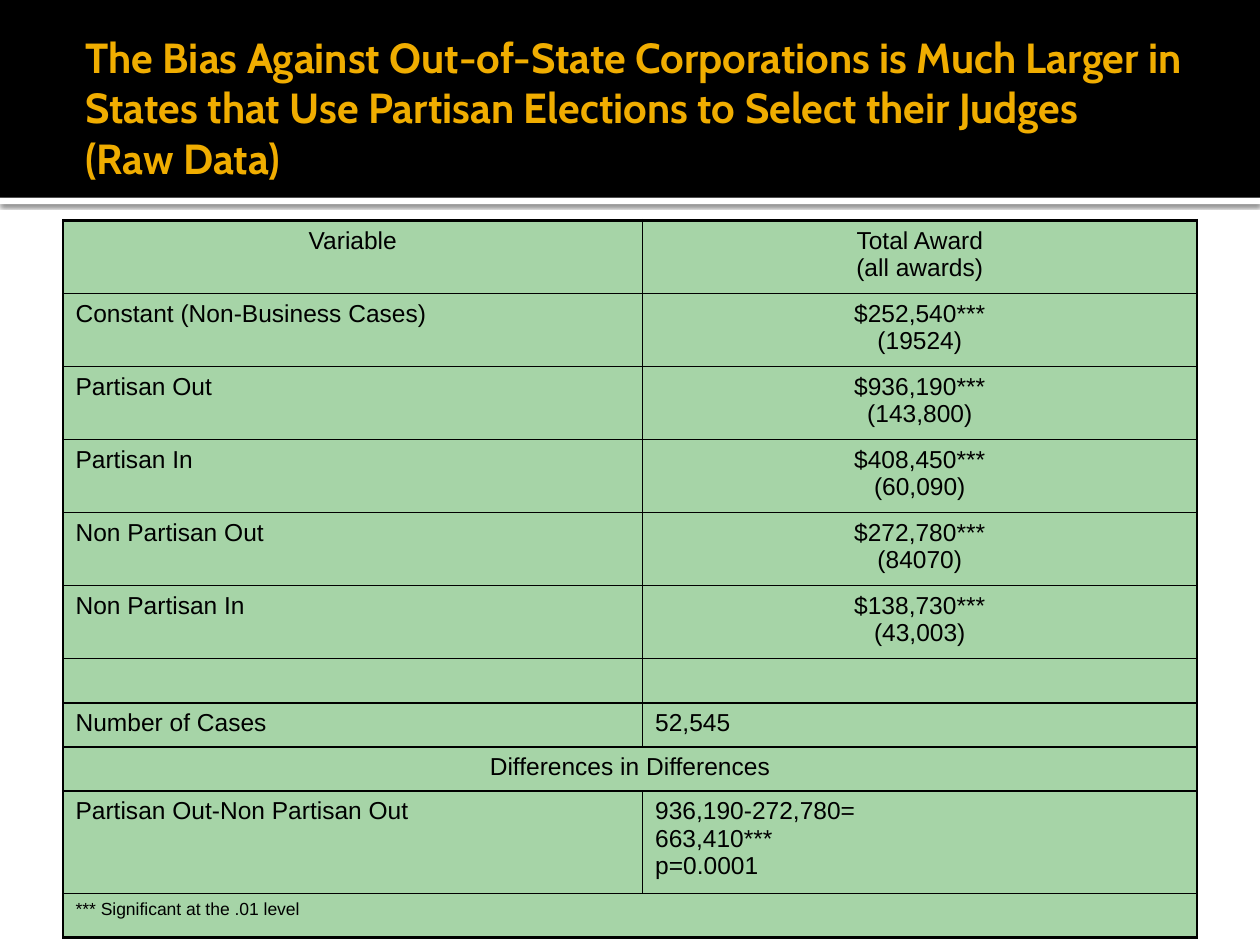
from pptx import Presentation
from pptx.dml.color import RGBColor
from pptx.enum.shapes import MSO_SHAPE
from pptx.enum.text import MSO_ANCHOR, PP_ALIGN
from pptx.oxml.ns import qn
from pptx.util import Inches, Pt
from lxml.etree import SubElement

COLORS = {"black": "000000", "white": "FFFFFF", "gold": "F0AD00", "green": "A6D4A7"}
LEFT, CENTER = PP_ALIGN.LEFT, PP_ALIGN.CENTER

ROWS = [
    (0.58, ("Variable", CENTER), ("Total Award\n(all awards)", CENTER)),
    (0.58, ("Constant (Non-Business Cases)", LEFT), ("$252,540***\n(19524)", CENTER)),
    (0.58, ("Partisan Out", LEFT), ("$936,190***\n(143,800)", CENTER)),
    (0.58, ("Partisan In", LEFT), ("$408,450***\n(60,090)", CENTER)),
    (0.58, ("Non Partisan Out", LEFT), ("$272,780***\n(84070)", CENTER)),
    (0.58, ("Non Partisan In", LEFT), ("$138,730***\n(43,003)", CENTER)),
    (0.35, ("", LEFT), ("", LEFT)),
    (0.35, ("Number of Cases", LEFT), ("52,545", LEFT)),
    (0.35, ("Differences in Differences", CENTER)),
    (0.81, ("Partisan Out-Non Partisan Out", LEFT),
     ("936,190-272,780=\n663,410***\np=0.0001", LEFT)),
    (0.35, ("*** Significant at the .01 level", LEFT)),
]
RULE_WIDTHS = {0: 2, 1: 1, 8: 1, 9: 1, 10: 1, len(ROWS): 2}


def rgb(name):
    return RGBColor.from_string(COLORS[name])


class SlideBuilder:
    title_font = "Cabin"
    table_font = "Arial"

    def __init__(self, slide):
        self.slide = slide

    def band(self, top, height, color, shadow=False):
        band = self.slide.shapes.add_shape(
            MSO_SHAPE.RECTANGLE, 0, Inches(top), Inches(10), Inches(height))
        band.fill.solid()
        band.fill.fore_color.rgb = rgb(color)
        band.line.fill.background()
        band.shadow.inherit = False
        if shadow:
            effects = band._element.spPr.find(qn("a:effectLst"))
            outer = SubElement(effects, qn("a:outerShdw"), blurRad=str(Pt(2.5)),
                               dist=str(Pt(0.8)), dir="5400000", algn="tl", rotWithShape="0")
            tint = SubElement(outer, qn("a:srgbClr"), val=COLORS["black"])
            SubElement(tint, qn("a:alpha"), val="60000")
        self.slide.shapes.title._element.addprevious(band._element)

    def title(self, text):
        title = self.slide.shapes.title
        title.left, title.top = Inches(0.58), Inches(0.5)
        title.width, title.height = Inches(9), Inches(0.7)
        frame = title.text_frame
        frame.text = text
        frame.word_wrap = True
        frame.vertical_anchor = MSO_ANCHOR.MIDDLE
        frame.margin_left, frame.margin_right = Inches(0.1), Inches(0.05)
        frame.margin_top = frame.margin_bottom = Inches(0.05)
        frame.paragraphs[0].alignment = LEFT
        for run in frame.paragraphs[0].runs:
            self.style(run.font, self.title_font, 24, "gold", True)

    def style(self, font, name, size, color, bold=False):
        font.name, font.size, font.bold = name, Pt(size), bold
        font.color.rgb = rgb(color)

    def table(self, rows, column_widths):
        heights = [row[0] for row in rows]
        table = self.slide.shapes.add_table(
            len(rows), len(column_widths), Inches(0.5), Inches(1.75),
            Inches(sum(column_widths)), Inches(sum(heights))).table
        table.first_row = table.horz_banding = False
        for column, width in zip(table.columns, column_widths):
            column.width = Inches(width)
        for index, (height, *entries) in enumerate(rows):
            table.rows[index].height = Inches(height)
            for column in range(len(column_widths)):
                self.cell_frame(table.cell(index, column), index, column, len(column_widths))
            if len(entries) == 1:
                table.cell(index, 0).merge(table.cell(index, len(column_widths) - 1))
            size = 10 if index == len(rows) - 1 else 14
            for column, (text, alignment) in enumerate(entries):
                self.cell_text(table.cell(index, column), text, alignment, size)

    def cell_frame(self, cell, row, column, column_count):
        properties = cell._tc.get_or_add_tcPr()
        sides = {
            "a:lnL": 1 if column == 0 else 0.75,
            "a:lnR": 1 if column == column_count - 1 else 0.75,
            "a:lnT": RULE_WIDTHS.get(row, 0.75),
            "a:lnB": RULE_WIDTHS.get(row + 1, 0.75),
        }
        for side, width in sides.items():
            line = SubElement(properties, qn(side), w=str(Pt(width)))
            SubElement(SubElement(line, qn("a:solidFill")), qn("a:srgbClr"), val=COLORS["black"])
        cell.fill.solid()
        cell.fill.fore_color.rgb = rgb("green")

    def cell_text(self, cell, text, alignment, size):
        cell.text_frame.text = text
        for paragraph in cell.text_frame.paragraphs:
            paragraph.alignment = alignment
            indents = paragraph._p.get_or_add_pPr()
            indents.set("marL", str(Inches(0.38)))
            indents.set("indent", str(Inches(-0.38)))
            for run in paragraph.runs:
                self.style(run.font, self.table_font, size, "black")
            if not paragraph.runs:
                SubElement(paragraph._p, qn("a:endParaRPr"), sz=str(size * 100))


def main():
    presentation = Presentation()
    presentation.slide_width, presentation.slide_height = Inches(10), Inches(7.5)
    builder = SlideBuilder(presentation.slides.add_slide(presentation.slide_layouts[5]))
    builder.band(1.57, 0.05, "white", shadow=True)
    builder.band(0, 1.57, "black")
    builder.title("The Bias Against Out-of-State Corporations is Much Larger in States "
                  "that Use Partisan Elections to Select their Judges\v(Raw Data)")
    builder.table(ROWS, [4.6, 4.4])
    presentation.save("out.pptx")


if __name__ == "__main__":
    main()
